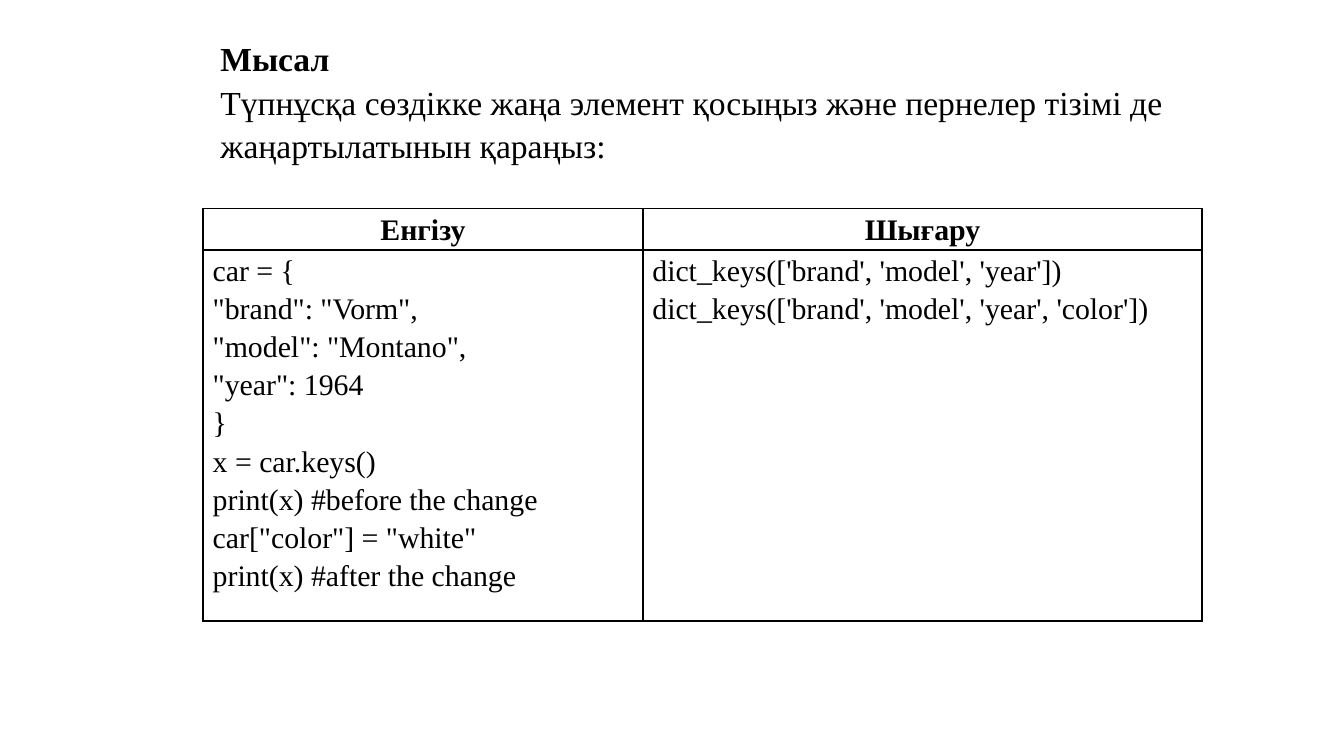
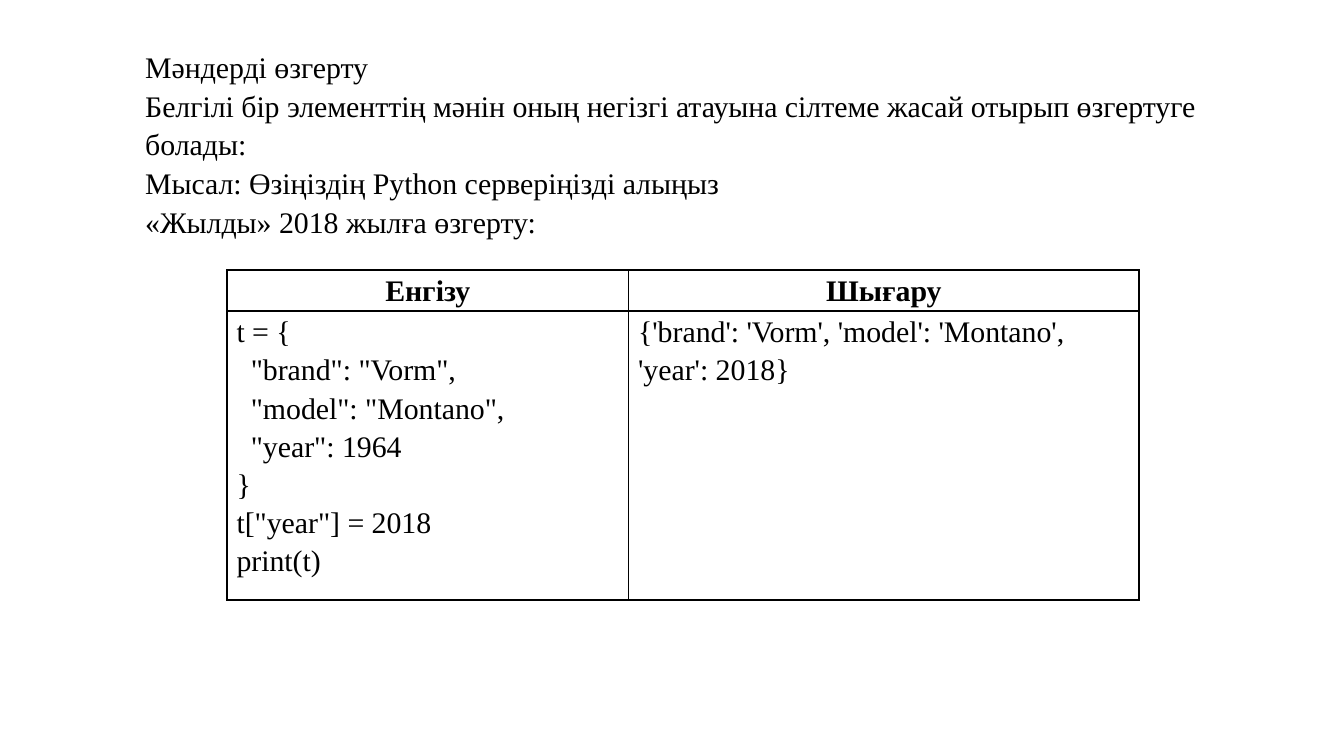
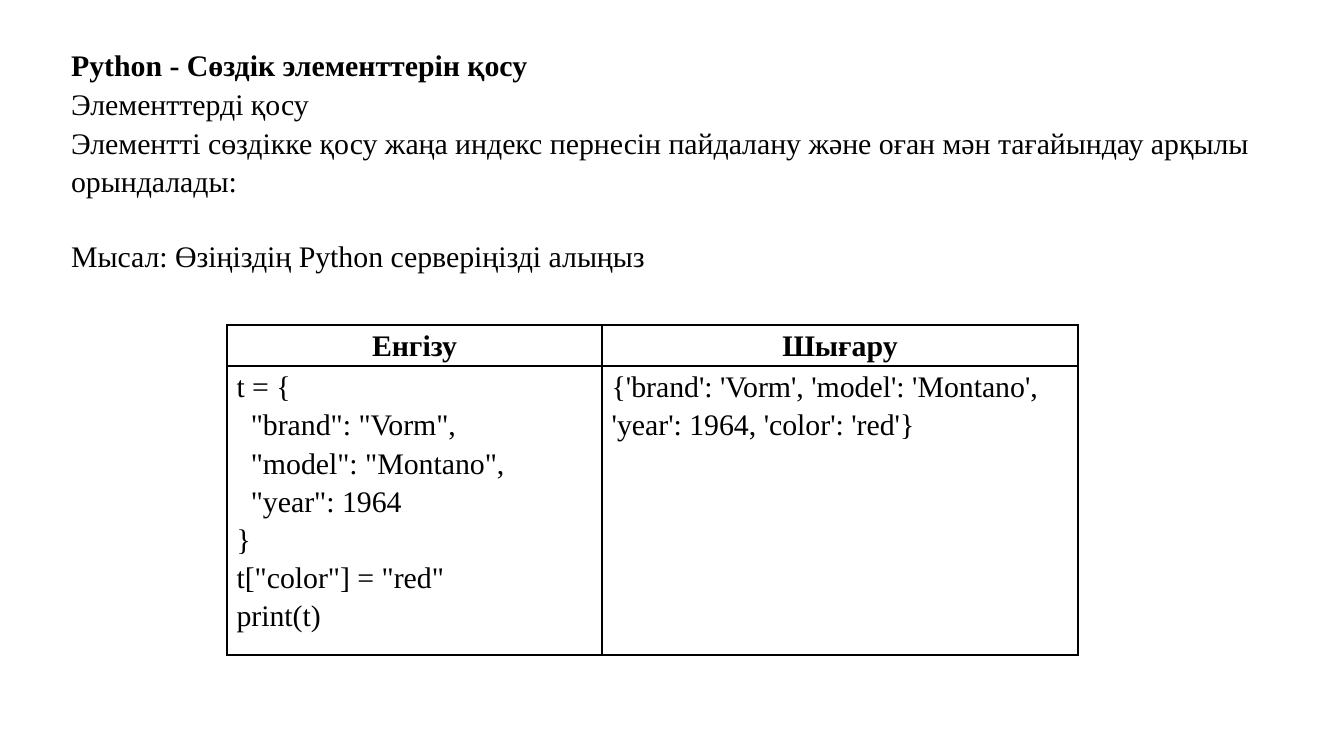
from lxml import etree
from pptx import Presentation
from pptx import util as u
from pptx.dml import color
from pptx.enum import text as t
from pptx.oxml import ns

BLACK = color.RGBColor(0, 0, 0)
FONT = "Times New Roman"
LINE_HEIGHT = 0.78
FIELDS = ['"brand": "Vorm",', '"model": "Montano",', '"year": 1964']

PAGES = [
    dict(
        intro=["Мысал",
               "Түпнұсқа сөздікке жаңа элемент қосыңыз және пернелер тізімі де "
               "жаңартылатынын қараңыз:"],
        intro_box=(3.91, 0.53, 19, 2.57), size=18, bold_heading=True,
        code=["car = {", *FIELDS, "}", "x = car.keys()",
              "print(x) #before the change", 'car["color"] = "white"',
              "print(x) #after the change"],
        output=["dict_keys(['brand', 'model', 'year'])",
                "dict_keys(['brand', 'model', 'year', 'color'])"],
        table_at=(3.84, 3.94), columns=(8.31, 10.57),
    ),
    dict(
        intro=["Мәндерді өзгерту",
               "Белгілі бір элементтің мәнін оның негізгі атауына сілтеме жасай "
               "отырып өзгертуге болады:",
               "Мысал: Өзіңіздің Python серверіңізді алыңыз",
               "«Жылды» 2018 жылға өзгерту:"],
        intro_box=(2.49, 0.74, 21.41, 4.37),
        code=["t = {", *FIELDS, "}", 't["year"] = 2018', "print(t)"],
        output=["{'brand': 'Vorm', 'model': 'Montano', 'year': 2018}"],
        table_at=(4.29, 5.1), columns=(7.59, 9.65), field_indent=0.27,
    ),
    dict(
        intro=["Python - Сөздік элементтерін қосу",
               "Элементтерді қосу",
               "Элементті сөздікке қосу жаңа индекс пернесін пайдалану және оған "
               "мән тағайындау арқылы орындалады:",
               "Мысал: Өзіңіздің Python серверіңізді алыңыз"],
        intro_box=(1.09, 0.71, 23.01, 4.52), bold_heading=True, last_gap=19,
        code=["t = {", *FIELDS, "}", 't["color"] = "red"', "print(t)"],
        output=["{'brand': 'Vorm', 'model': 'Montano', 'year': 1964, 'color': 'red'}"],
        table_at=(4.29, 6.14), columns=(7.09, 8.99), field_indent=0.27,
    ),
]


def write(para, text, size=16, bold=False, align=t.PP_ALIGN.LEFT,
          spacing=1.15, before=0, indent=0):
    para.alignment = align
    para.line_spacing = spacing
    para.space_before = u.Pt(before)
    if indent:
        properties = para._p.get_or_add_pPr()
        properties.set("marL", str(u.Cm(indent)))
        properties.set("indent", "0")
    span = para.add_run()
    span.text = text
    span.font.name = FONT
    span.font.size = u.Pt(size)
    span.font.bold = bold
    span.font.color.rgb = BLACK


def paragraphs(frame, count):
    return [frame.paragraphs[0]] + [frame.add_paragraph() for _ in range(count - 1)]


def add_intro(page, lines, box, size, bold_heading, last_gap):
    title = page.shapes.title
    title.left, title.top, title.width, title.height = map(u.Cm, box)
    frame = title.text_frame
    frame.word_wrap = True
    frame.auto_size = t.MSO_AUTO_SIZE.NONE
    frame.vertical_anchor = t.MSO_ANCHOR.TOP
    last = len(lines) - 1
    for index, (para, line) in enumerate(zip(paragraphs(frame, len(lines)), lines)):
        write(para, line, size=size, bold=bold_heading and index == 0,
              spacing=1.08, before=last_gap if index == last else 0)


def add_borders(cell):
    properties = cell._tc.get_or_add_tcPr()
    for position, side in enumerate(("lnL", "lnR", "lnT", "lnB")):
        line = etree.Element(ns.qn(f"a:{side}"), w=str(u.Pt(1)))
        fill = etree.SubElement(line, ns.qn("a:solidFill"))
        etree.SubElement(fill, ns.qn("a:srgbClr"), val=str(BLACK))
        properties.insert(position, line)


def fill_cell(cell, lines, field_indent=0, **style):
    cell.margin_left = cell.margin_right = u.Cm(0.18)
    cell.margin_top = cell.margin_bottom = 0
    cell.fill.background()
    add_borders(cell)
    for para, line in zip(paragraphs(cell.text_frame, len(lines)), lines):
        write(para, line, indent=field_indent if line.startswith('"') else 0, **style)


def add_example(page, at, columns, code, output, field_indent):
    heights = [LINE_HEIGHT, LINE_HEIGHT * len(code)]
    left, top = at
    table = page.shapes.add_table(
        2, 2, u.Cm(left), u.Cm(top), u.Cm(sum(columns)), u.Cm(sum(heights))).table
    table.horz_banding = False
    for column, width in zip(table.columns, columns):
        column.width = u.Cm(width)
    for row, height in zip(table.rows, heights):
        row.height = u.Cm(height)
    for index, (heading, lines) in enumerate((("Енгізу", code), ("Шығару", output))):
        fill_cell(table.cell(0, index), [heading], bold=True, align=t.PP_ALIGN.CENTER)
        fill_cell(table.cell(1, index), lines, field_indent)


def add_page(deck, intro, intro_box, code, output, table_at, columns,
             size=16, bold_heading=False, last_gap=0, field_indent=0):
    page = deck.slides.add_slide(deck.slide_layouts.get_by_name("Title Only"))
    add_intro(page, intro, intro_box, size, bold_heading, last_gap)
    add_example(page, table_at, columns, code, output, field_indent)


def main():
    deck = Presentation()
    deck.slide_width, deck.slide_height = u.Cm(25.4), u.Cm(14.29)
    for content in PAGES:
        add_page(deck, **content)
    deck.save("out.pptx")


if __name__ == "__main__":
    main()
